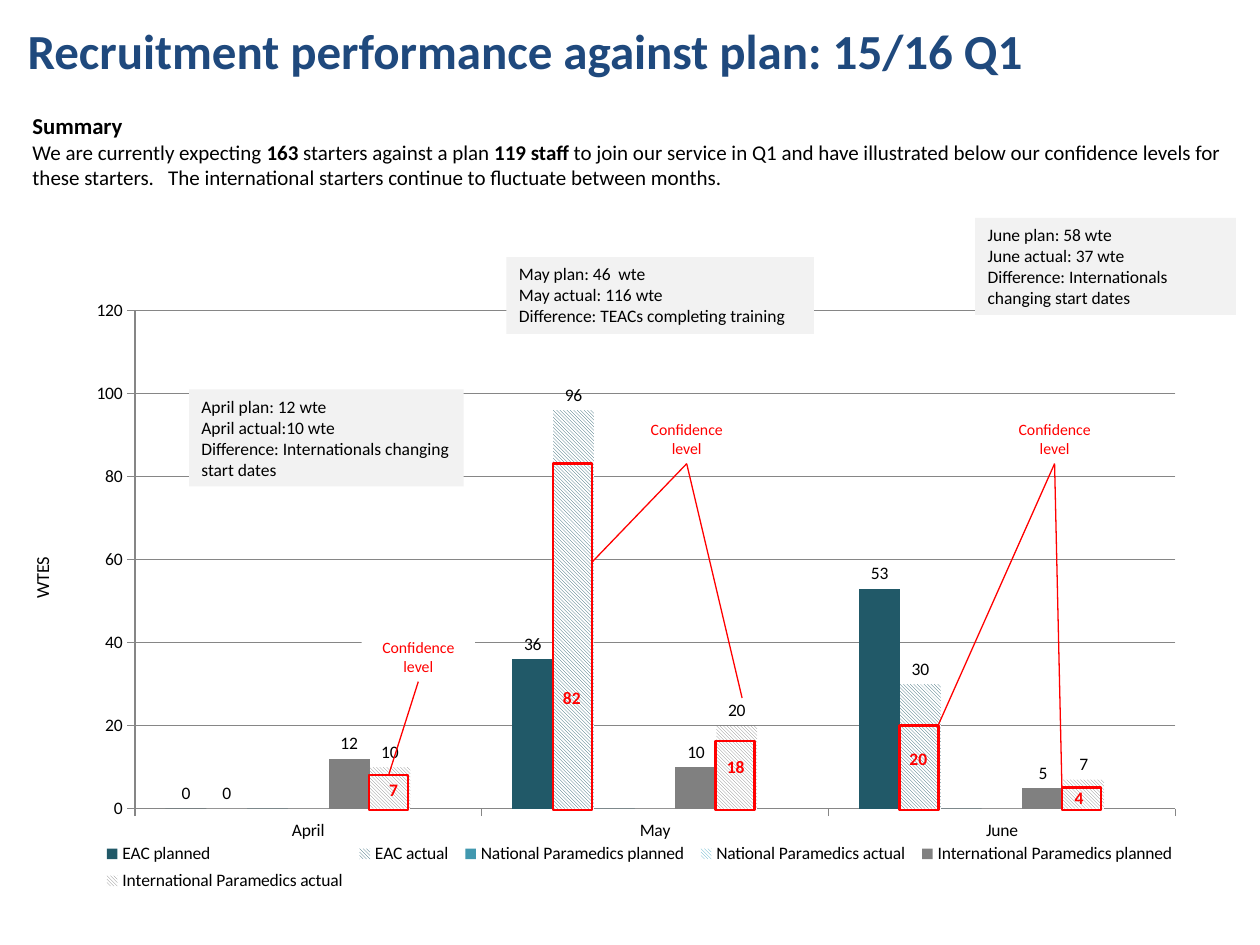
from lxml import etree
from pptx import Presentation
from pptx.chart.data import CategoryChartData
from pptx.dml.color import RGBColor
from pptx.enum.chart import XL_CHART_TYPE, XL_LABEL_POSITION, XL_LEGEND_POSITION, XL_TICK_MARK
from pptx.enum.dml import MSO_PATTERN
from pptx.enum.shapes import MSO_CONNECTOR, MSO_SHAPE
from pptx.enum.text import MSO_ANCHOR, PP_ALIGN
from pptx.oxml import parse_xml
from pptx.oxml.ns import nsdecls, qn
from pptx.util import Pt

PX = 9144  # 100 px to the inch
BAR_W, EAC, INTL = 31, 58, 187  # bar width and bar offsets within a month


class Theme:
    font = "Calibri"
    title, text, alert, note, white, grid = "1F497D", "000000", "FF0000", "F2F2F2", "FFFFFF", "868686"
    teal, blue, light_blue, grey = "215968", "4198AF", "4BACC6", "808080"
    title_pt, head_pt, body_pt, axis_pt, small_pt, label_pt = 28, 13, 12, 10.5, 10, 9


def px(*values):
    return [round(v * PX) for v in values]


def rgb(value):
    return RGBColor.from_string(value)


def set_font(font, size, color=Theme.text, bold=False):
    for key, value in dict(name=Theme.font, size=Pt(size), bold=bold).items():
        setattr(font, key, value)
    font.color.rgb = rgb(color)


def write(sp, paragraphs, align=PP_ALIGN.LEFT, anchor=MSO_ANCHOR.TOP):
    """Each paragraph is a list of (text, size, color, bold) runs."""
    tf = sp.text_frame
    for key, value in dict(word_wrap=True, vertical_anchor=anchor).items():
        setattr(tf, key, value)
    for i, runs in enumerate(paragraphs):
        p = tf.add_paragraph() if i else tf.paragraphs[0]
        p.alignment = align
        for text, *style in runs:
            r = p.add_run()
            r.text = text
            set_font(r.font, *style)


def add_text(s, box, paragraphs, **layout):
    sp = s.shapes.add_textbox(*px(*box))
    write(sp, paragraphs, **layout)
    return sp


def add_rect(s, box, fill=None, line=None):
    sp = s.shapes.add_shape(MSO_SHAPE.RECTANGLE, *px(*box))
    sp.shadow.inherit = False
    if fill:
        sp.fill.solid()
        sp.fill.fore_color.rgb = rgb(fill)
    else:
        sp.fill.background()
    if line:
        sp.line.color.rgb = rgb(line)
        sp.line.width = Pt(1.5)
    else:
        sp.line.fill.background()
    return sp


def add_header(s, box):
    x, y, w, h = box
    t = Theme
    add_text(s, (x, y, 858, 85), anchor=MSO_ANCHOR.MIDDLE, paragraphs=[
        [("Recruitment performance against plan: 15/16 Q1", t.title_pt, t.title, True)]])
    parts = [("We are currently expecting ", False), ("163 ", True),
             ("starters against a plan ", False), ("119 staff ", True),
             ("to join our service in Q1 and have illustrated below our confidence levels for "
              "these starters.   The international starters continue to fluctuate between months.", False)]
    add_text(s, (x + 4, y + 87, w - 4, h - 87), [
        [("Summary", t.head_pt, t.text, True)],
        [(text, t.body_pt, t.text, bold) for text, bold in parts]])


def set_layout(parent, index, **values):
    """Place a chart part at fractions of the chart area."""
    for old in parent.findall(qn("c:layout")):
        parent.remove(old)
    modes = {"xMode": "edge", "yMode": "edge", **values}
    if index == 0:
        modes = {"layoutTarget": "inner", **modes}
    items = "".join(f'<c:{k} val="{v}"/>' for k, v in modes.items())
    parent.insert(index, parse_xml(
        f'<c:layout {nsdecls("c")}><c:manualLayout>{items}</c:manualLayout></c:layout>'))


def add_chart(s, box):
    x, y, w, h = box
    t = Theme
    series = [  # name, values, colour, hatched, labelled
        ("EAC planned", (0, 36, 53), t.teal, False, True),
        ("EAC actual", (0, 96, 30), t.teal, True, True),
        ("National Paramedics planned", (0, 0, 0), t.blue, False, False),
        ("National Paramedics actual", (0, 0, 0), t.light_blue, True, False),
        ("International Paramedics planned", (12, 10, 5), t.grey, False, True),
        ("International Paramedics actual", (10, 20, 7), t.grey, True, True),
        ("Series 7", (None, None, None), t.blue, False, False)]
    data = CategoryChartData()
    data.categories = ["April", "May", "June"]
    for name, values, *_ in series:
        data.add_series(name, values)
    chart = s.shapes.add_chart(XL_CHART_TYPE.COLUMN_CLUSTERED, *px(*box), data).chart
    set_font(chart.font, t.small_pt)
    chart.has_title = False

    # Bars and their labels
    plot = chart.plots[0]
    for key, value in dict(gap_width=150, overlap=0, vary_by_categories=False).items():
        setattr(plot, key, value)
    for ser, (_, _, color, hatched, labelled) in zip(plot.series, series):
        fill = ser.format.fill
        if hatched:
            fill.patterned()
            fill.pattern = MSO_PATTERN.LIGHT_DOWNWARD_DIAGONAL
            fill.back_color.rgb = rgb(t.white)
        else:
            fill.solid()
        fill.fore_color.rgb = rgb(color)
        if labelled:
            ser.data_labels.show_value = True
            ser.data_labels.position = XL_LABEL_POSITION.OUTSIDE_END

    # Axes
    va, ca = chart.value_axis, chart.category_axis
    for key, value in dict(minimum_scale=0, maximum_scale=120, major_unit=20,
                           has_major_gridlines=True).items():
        setattr(va, key, value)
    for axis in (va, ca):
        axis.major_tick_mark = XL_TICK_MARK.OUTSIDE
    for fmt in (va.format, ca.format, va.major_gridlines.format):
        fmt.line.color.rgb = rgb(t.grid)
        fmt.line.width = Pt(0.75)

    # Legend along the bottom, without the empty series
    chart.has_legend = True
    legend = chart.legend
    legend.position = XL_LEGEND_POSITION.RIGHT
    legend.include_in_layout = False
    legend._element.insert(1, parse_xml(
        f'<c:legendEntry {nsdecls("c")}><c:idx val="6"/><c:delete val="1"/></c:legendEntry>'))
    set_layout(legend._element, 2, x=0.01, y=0.9, w=0.97, h=0.1)
    set_layout(chart._chartSpace.chart.plotArea, 0, x=0.045, y=0.048, w=0.928, h=0.807)

    # Axis title
    sp = add_text(s, (x - 87, y + 221, 108, 29), [[("WTES", t.axis_pt)]], align=PP_ALIGN.CENTER)
    sp.rotation = 270


def add_month(s, box, note, lines, label, frames, targets):
    """Frames are (bar, height, text, dx, dy); targets are a point or (frame, side)."""
    x, y, w, h = box
    t = Theme
    left, top, width, height = note
    write(add_rect(s, (x + left, y + top, width, height), t.note),
          [[(line, t.small_pt)] for line in lines])

    # Confidence frames on the bars
    rects = []
    for bar, tall, text, dx, dy in frames:
        fx, fy = x + bar, y + h - tall
        rects.append(add_rect(s, (fx, fy, BAR_W, tall), line=t.alert))
        add_text(s, (fx + dx, fy + dy, 40, 27), [[(text, t.small_pt, t.alert, True)]])

    # Label and its leader lines
    tag = add_rect(s, (x + label[0], y + label[1], 90, 40), t.white)
    write(tag, [[("Confidence level", t.label_pt, t.alert)]], align=PP_ALIGN.CENTER)
    for kind, a, b in targets:
        end = (x + a, y + b) if kind == "point" else (0, 0)
        c = s.shapes.add_connector(MSO_CONNECTOR.STRAIGHT, 0, 0, *px(*end))
        c.begin_connect(tag, 2)
        if kind == "frame":
            c.end_connect(rects[a], b)
        c.line.color.rgb = rgb(t.alert)
        c.line.width = Pt(0.75)
        etree.SubElement(c._element.spPr, qn("a:effectLst"))


MONTHS = [
    dict(note=(44, 136, 218, 77), label=(181, 328),
         lines=["April plan: 12 wte", "April actual:10 wte",
                "Difference: Internationals changing start dates"],
         frames=[(INTL, 28, "7", 6, -2)], targets=[("frame", 0, 0)]),
    dict(note=(21, 31, 244, 61), label=(119, 155),
         lines=["May plan: 46  wte", "May actual: 116 wte",
                "Difference: TEACs completing training"],
         frames=[(EAC, 275, "82", -2, 172), (INTL, 55, "18", -1, 7)],
         targets=[("point", 89, 273), ("point", 208, 381)]),
    dict(note=(118, 0, 207, 77), label=(136, 155),
         lines=["June plan: 58 wte", "June actual: 37 wte",
                "Difference: Internationals changing start dates"],
         frames=[(EAC, 67, "20", -2, 13), (INTL, 18, "4", 0, -5)],
         targets=[("point", 88, 404), ("frame", 1, 1)]),
]


def main():
    prs = Presentation()
    prs.slide_width, prs.slide_height = px(1000, 750)
    s = prs.slides.add_slide(prs.slide_layouts[6])
    add_header(s, (12, -3, 988, 159))
    add_chart(s, (67, 223, 890, 490))
    for i, month in enumerate(MONTHS):
        add_month(s, (106 + 275 * i, 173, 275, 470), **month)
    prs.save("out.pptx")


if __name__ == "__main__":
    main()
